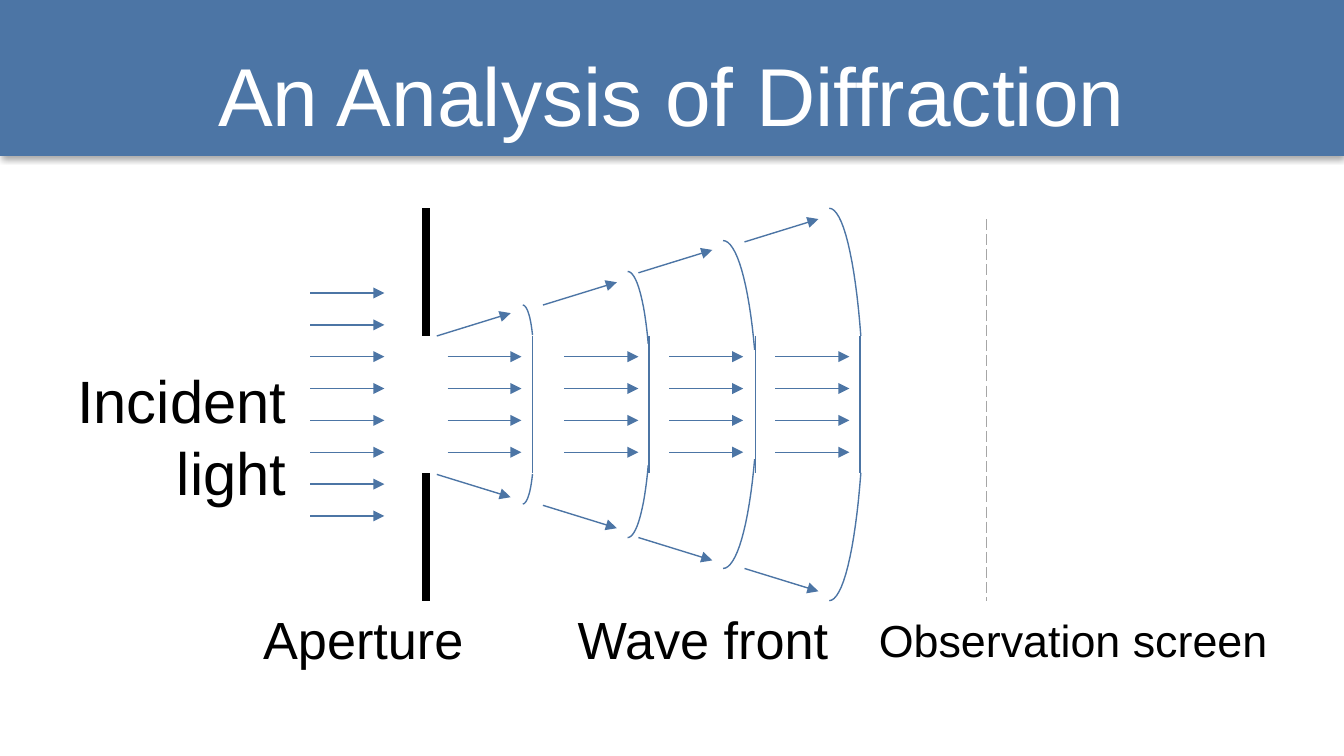
from math import cos, radians, sin
from typing import NamedTuple

from lxml import etree
from pptx import Presentation
from pptx.dml.color import RGBColor
from pptx.enum.dml import MSO_LINE
from pptx.enum.shapes import MSO_CONNECTOR, MSO_SHAPE
from pptx.enum.text import MSO_ANCHOR, MSO_AUTO_SIZE, PP_ALIGN
from pptx.oxml import parse_xml
from pptx.oxml.ns import nsdecls, qn
from pptx.util import Inches, Pt

BLUE = RGBColor(0x4C, 0x75, 0xA5)
GREY = RGBColor(0xA6, 0xA6, 0xA6)
BLACK = RGBColor(0, 0, 0)
WHITE = RGBColor(0xFF, 0xFF, 0xFF)
FONT = "Arial"
STRAIGHT = MSO_CONNECTOR.STRAIGHT
LONG_DASH = MSO_LINE.LONG_DASH
RECTANGLE = MSO_SHAPE.RECTANGLE
MIDDLE = MSO_ANCHOR.MIDDLE
FIT_SHAPE = MSO_AUTO_SIZE.SHAPE_TO_FIT_TEXT
LEFT, CENTER, RIGHT = PP_ALIGN.LEFT, PP_ALIGN.CENTER, PP_ALIGN.RIGHT

SLIDE_WIDTH = Inches(10)
SLIDE_HEIGHT = SLIDE_WIDTH * 9 // 16
AXIS = 3.01  # height of the optical axis
SLIT_TOP = 2.5
ARROW = 0.55  # horizontal reach of every arrow
RAY_RISE = 0.17
RAY_DROP = 0.01  # lower rays sit slightly below the mirrored upper ones
ROWS = [2.18 + 0.237 * i for i in range(8)]
ARC_SWEEP = 64.7  # degrees of the ellipse drawn by each curved edge
ARC_STEPS = 16


class Front(NamedTuple):
    x: float  # straight middle part
    arc_x: float  # tip of the curved edges
    arc_y: float
    rx: float
    ry: float
    arrows_x: float  # arrows leading to this front
    ray_x: float  # diverging ray leading to this front
    ray_y: float


class Label(NamedTuple):
    text: str
    left: float
    top: float
    width: float
    height: float
    size: int
    align: PP_ALIGN = LEFT
    wrap: bool = False


FRONTS = [
    Front(3.96, 3.89, 2.27, 0.08, 0.39, 3.33, 3.25, 2.5),
    Front(4.83, 4.67, 2.02, 0.17, 0.94, 4.2, 4.04, 2.27),
    Front(5.62, 5.38, 1.79, 0.26, 1.42, 4.98, 4.75, 2.03),
    Front(6.4, 6.17, 1.55, 0.26, 1.66, 5.77, 5.54, 1.8),
]
LABELS = [
    Label("Aperture", 1.86, 4.47, 1.71, 0.57, 28),
    Label("Incident light", -0.06, 2.66, 2.29, 1.18, 32, RIGHT, True),
    Label("Wave front", 4.2, 4.47, 2.09, 0.57, 28),
    Label("Observation screen", 6.44, 4.51, 3.12, 0.5, 24),
]


def mirror(y: float) -> float:
    return 2 * AXIS - y


def style_text(p, size: int, color: RGBColor, align: PP_ALIGN) -> None:
    p.alignment = align
    for r in p.runs:
        r.font.name, r.font.size = FONT, Pt(size)
        r.font.color.rgb = color


def add_line(s, x1: float, y1: float, x2: float, y2: float,
             color: RGBColor = BLUE, width: float = 0.75,
             arrow: bool = False, dash=None) -> None:
    cn = s.shapes.add_connector(STRAIGHT, Inches(x1), Inches(y1),
                                Inches(x2), Inches(y2))
    cn.line.color.rgb = color
    cn.line.width = Pt(width)
    if dash is not None:
        cn.line.dash_style = dash
    if arrow:
        etree.SubElement(cn.line._get_or_add_ln(), qn("a:tailEnd"), type="triangle")
    etree.SubElement(cn._element.spPr, qn("a:effectLst"))


def add_arc(s, front: Front, lower: bool) -> None:
    points = []
    for i in range(ARC_STEPS + 1):
        a = radians(ARC_SWEEP * i / ARC_STEPS)
        y = front.arc_y + front.ry * (1 - cos(a))
        points.append((Inches(front.arc_x + front.rx * sin(a)),
                       Inches(mirror(y) if lower else y)))
    builder = s.shapes.build_freeform(*points[0])
    builder.add_line_segments(points[1:], close=False)
    sp = builder.convert_to_shape()
    sp.shadow.inherit = False
    sp.fill.background()
    sp.line.color.rgb = BLUE
    sp.line.width = Pt(0.75)


def add_front(s, front: Front) -> None:
    add_line(s, front.x, SLIT_TOP, front.x, mirror(SLIT_TOP))
    for y in ROWS[2:6]:
        add_line(s, front.arrows_x, y, front.arrows_x + ARROW, y, arrow=True)
    for lower in (False, True):
        add_arc(s, front, lower)
        y1, y2 = front.ray_y, front.ray_y - RAY_RISE
        if lower:
            y1, y2 = mirror(y1) + RAY_DROP, mirror(y2) + RAY_DROP
        add_line(s, front.ray_x, y1, front.ray_x + ARROW, y2, arrow=True)


def add_label(s, label: Label) -> None:
    box = s.shapes.add_textbox(Inches(label.left), Inches(label.top),
                               Inches(label.width), Inches(label.height))
    tf = box.text_frame
    tf.text = label.text
    tf.word_wrap = label.wrap
    tf.auto_size = FIT_SHAPE
    style_text(tf.paragraphs[0], label.size, BLACK, label.align)


def add_title(s, text: str) -> None:
    # Band with a soft shadow, placed behind the title
    band = s.shapes.add_shape(RECTANGLE, 0, 0, SLIDE_WIDTH, Inches(1.16))
    band.fill.solid()
    band.fill.fore_color.rgb = BLUE
    band.line.fill.background()
    band._element.spPr.append(parse_xml(
        f'<a:effectLst {nsdecls("a")}>'
        f'<a:outerShdw blurRad="{Pt(3.1)}" dist="{Pt(1.8)}" dir="5400000" rotWithShape="0">'
        '<a:srgbClr val="000000"><a:alpha val="35000"/></a:srgbClr>'
        '</a:outerShdw></a:effectLst>'))
    s.shapes._spTree.insert(2, band._element)

    title = s.shapes.title
    title.left, title.top = Inches(0.5), Inches(0.23)
    title.width, title.height = Inches(9), Inches(0.94)
    tf = title.text_frame
    tf.text = text
    tf.vertical_anchor = MIDDLE
    style_text(tf.paragraphs[0], 44, WHITE, CENTER)


def main() -> None:
    prs = Presentation()
    prs.slide_width, prs.slide_height = SLIDE_WIDTH, SLIDE_HEIGHT
    s = prs.slides.add_slide(prs.slide_layouts[5])
    add_title(s, "An Analysis of Diffraction")

    # Aperture walls
    for y1, y2 in ((1.55, SLIT_TOP), (mirror(SLIT_TOP), mirror(1.55))):
        add_line(s, 3.17, y1, 3.17, y2, BLACK, 4.5)

    # Incident light
    for y in ROWS:
        add_line(s, 2.31, y, 2.31 + ARROW, y, arrow=True)

    # Wave fronts and the rays between them
    for front in FRONTS:
        add_front(s, front)

    # Observation screen
    add_line(s, 7.34, 1.63, 7.34, 4.47, GREY, dash=LONG_DASH)

    for label in LABELS:
        add_label(s, label)
    prs.save("out.pptx")


if __name__ == "__main__":
    main()
